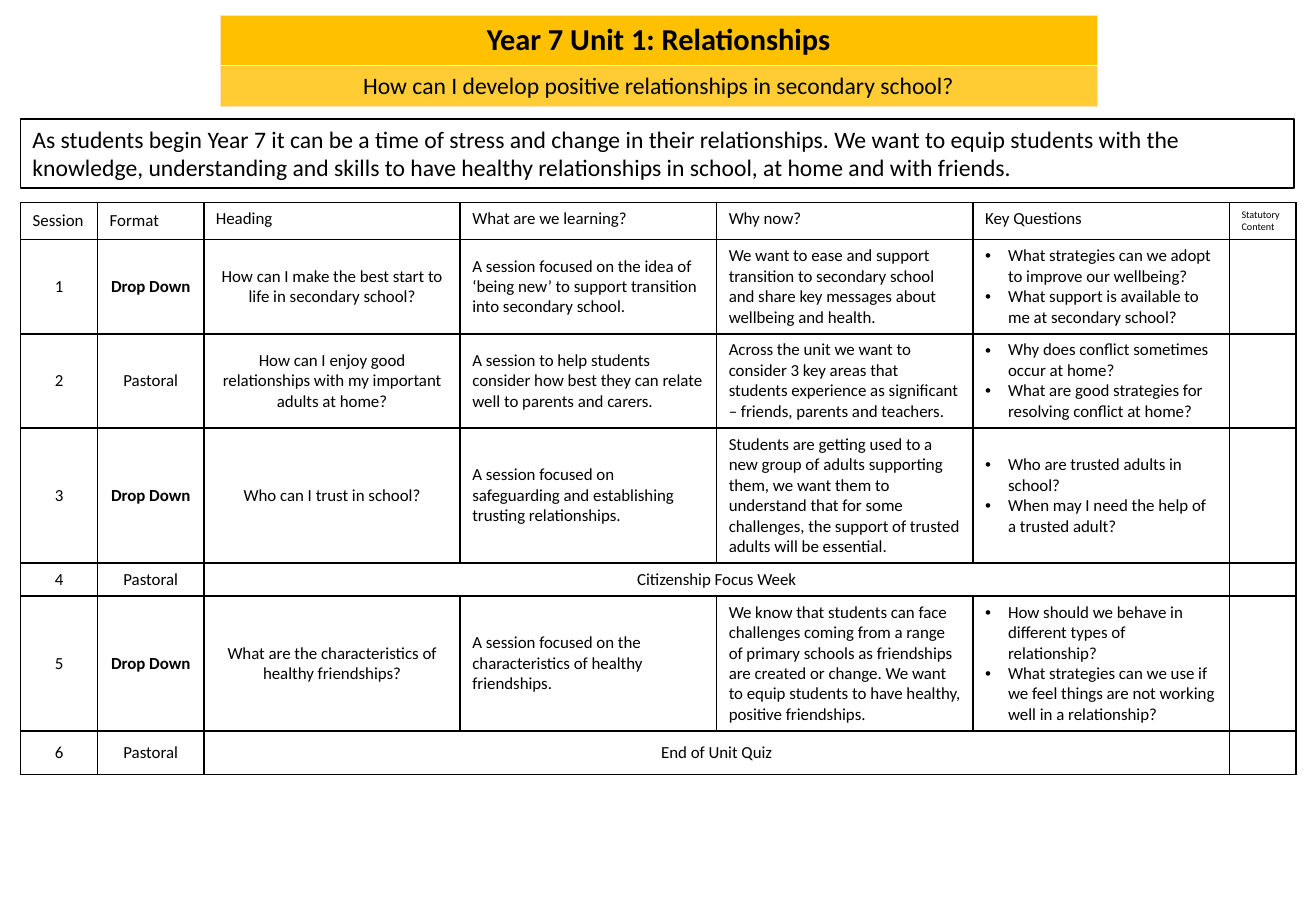
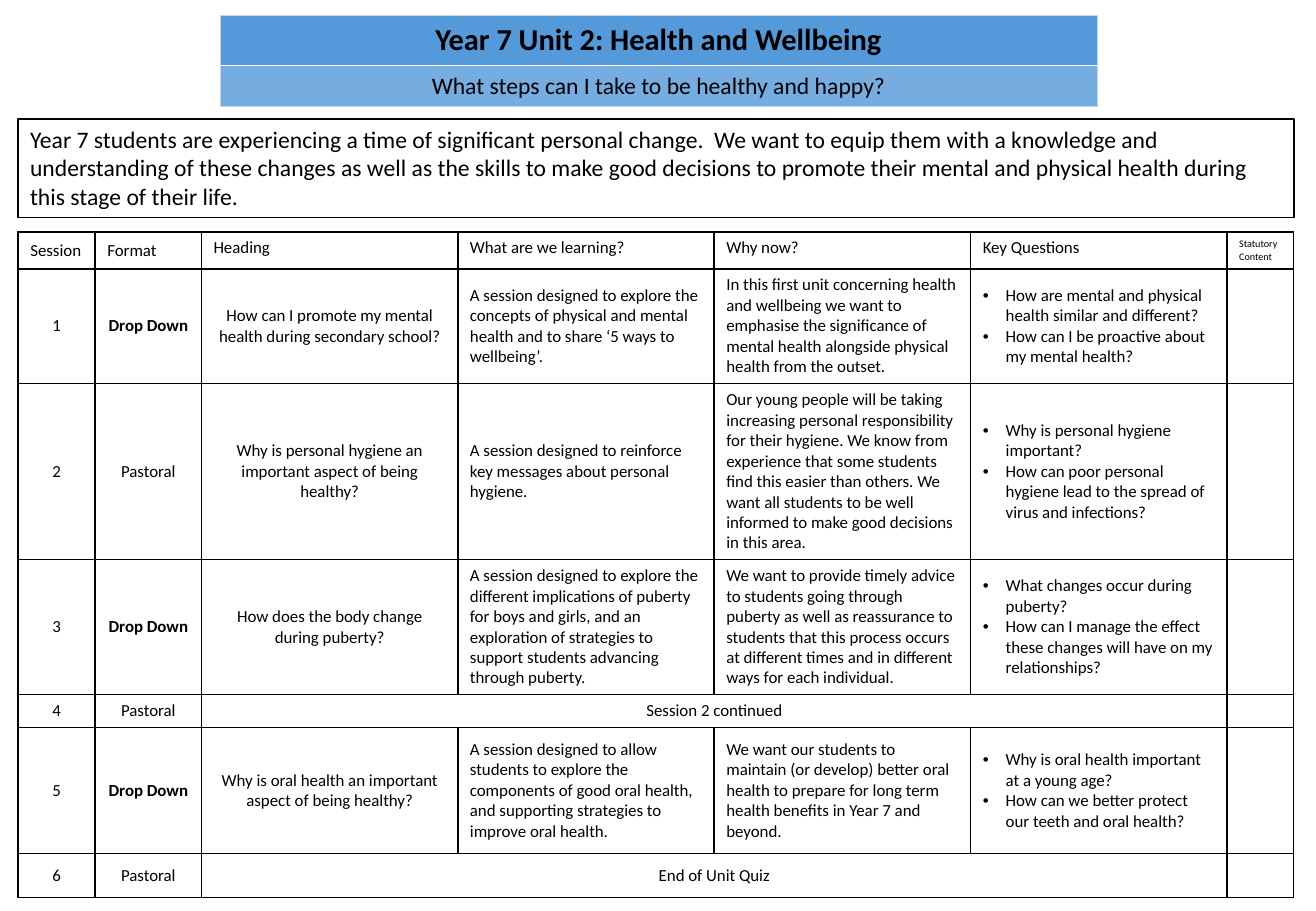
from pptx import Presentation
from pptx.dml.color import RGBColor
from pptx.enum.shapes import MSO_SHAPE
from pptx.enum.text import MSO_ANCHOR as ANCHOR, PP_ALIGN as ALIGN
from pptx.oxml import parse_xml
from pptx.oxml.ns import nsdecls, qn
from pptx.util import Cm, Pt

FONT = "Calibri"
BLACK, WHITE = "000000", "FFFFFF"

# Shared layout, in centimetres
SLIDE_WIDTH, SLIDE_HEIGHT = 27.51, 19.05
BANNER_BOX = (4.6, 0.33, 18.34)
BANNER_ROWS = (1.04, 0.84)
INTRO_TOP, INTRO_TO_TABLE = 2.49, 0.3
COLUMN_WIDTHS = (1.61, 2.22, 5.36, 5.36, 5.36, 5.36, 1.39)
BULLET_INDENT = 0.48
HEADERS = ("Session", "Format", "Heading", "What are we learning?",
           "Why now?", "Key Questions", "Statutory Content")
FIRST_WIDE, LAST_WIDE, STATUTORY = 2, 5, 6

# Lessons: heading, learning, reason, key questions; a plain string fills the row
UNITS = [
    {
        "title": "Year 7 Unit 1: Relationships",
        "question": "How can I develop positive relationships in secondary school?",
        "colours": ("FFC000", "FFCD33", "FFE2BD"),
        "intro": "As students begin Year 7 it can be a time of stress and change in their "
                 "relationships. We want to equip students with the knowledge, understanding and "
                 "skills to have healthy relationships in school, at home and with friends.",
        "intro_box": (0.43, 26.62, 1.45),
        "row_heights": (0.77, 1.97, 1.97, 2.82, 0.69, 2.82, 0.91),
        "lessons": [
            ("How can I make the best start to life in secondary school?",
             "A session focused on the idea of ‘being new’ to support transition into "
             "secondary school.",
             "We want to ease and support transition to secondary school and share key messages "
             "about wellbeing and health.",
             ["What strategies can we adopt to improve our wellbeing?",
              "What support is available to me at secondary school?"]),
            ("How can I enjoy good relationships with my important adults at home?",
             "A session to help students consider how best they can relate well to parents "
             "and carers.",
             "Across the unit we want to consider 3 key areas that students experience as "
             "significant – friends, parents and teachers.",
             ["Why does conflict sometimes occur at home?",
              "What are good strategies for resolving conflict at home?"]),
            ("Who can I trust in school?",
             "A session focused on safeguarding and establishing trusting relationships.",
             "Students are getting used to a new group of adults supporting them, we want them to "
             "understand that for some challenges, the support of trusted adults will be "
             "essential.",
             ["Who are trusted adults in school?",
              "When may I need the help of a trusted adult?"]),
            "Citizenship Focus Week",
            ("What are the characteristics of healthy friendships?",
             "A session focused on the characteristics of healthy friendships.",
             "We know that students can face challenges coming from a range of primary schools as "
             "friendships are created or change. We want to equip students to have healthy, "
             "positive friendships.",
             ["How should we behave in different types of relationship?",
              "What strategies can we use if we feel things are not working well in a "
              "relationship?"]),
            "End of Unit Quiz",
        ],
    },
    {
        "title": "Year 7 Unit 2: Health and Wellbeing",
        "question": "What steps can I take to be healthy and happy?",
        "colours": ("5499DA", "76ADE1", "C4D5EB"),
        "intro": "Year 7 students are experiencing a time of significant personal change.  We want "
                 "to equip them with a knowledge and understanding of these changes as well as the "
                 "skills to make good decisions to promote their mental and physical health during "
                 "this stage of their life.",
        "intro_box": (0.38, 26.67, 2.06),
        "row_heights": (0.77, 2.4, 3.68, 2.82, 0.69, 2.64, 0.92),
        "lessons": [
            ("How can I promote my mental health during secondary school?",
             "A session designed to explore the concepts of physical and mental health and to "
             "share ‘5 ways to wellbeing’.",
             "In this first unit concerning health and wellbeing we want to emphasise the "
             "significance of mental health alongside physical health from the outset.",
             ["How are mental and physical health similar and different?",
              "How can I be proactive about my mental health?"]),
            ("Why is personal hygiene an important aspect of being healthy?",
             "A session designed to reinforce key messages about personal hygiene.",
             "Our young people will be taking increasing personal responsibility for their "
             "hygiene. We know from experience that some students find this easier than others. "
             "We want all students to be well informed to make good decisions in this area.",
             ["Why is personal hygiene important?",
              "How can poor personal hygiene lead to the spread of virus and infections?"]),
            ("How does the body change during puberty?",
             "A session designed to explore the different implications of puberty for boys and "
             "girls, and an exploration of strategies to support students advancing through "
             "puberty.",
             "We want to provide timely advice to students going through puberty as well as "
             "reassurance to students that this process occurs at different times and in "
             "different ways for each individual.",
             ["What changes occur during puberty?",
              "How can I manage the effect these changes will have on my relationships?"]),
            "Session 2 continued",
            ("Why is oral health an important aspect of being healthy?",
             "A session designed to allow students to explore the components of good oral health, "
             "and supporting strategies to improve oral health.",
             "We want our students to maintain (or develop) better oral health to prepare for long "
             "term health benefits in Year 7 and beyond.",
             ["Why is oral health important at a young age?",
              "How can we better protect our teeth and oral health?"]),
            "End of Unit Quiz",
        ],
    },
]


def colour(hex_text):
    return RGBColor.from_string(hex_text)


def write(paragraph, text, size, bold=False, align=ALIGN.LEFT):
    paragraph.alignment = align
    run = paragraph.add_run()
    run.text = text
    run.font.name = FONT
    run.font.size = Pt(size)
    run.font.bold = bold
    run.font.color.rgb = colour(BLACK)


def write_cell(cell, text, size=10, bold=False, align=ALIGN.LEFT, anchor=ANCHOR.MIDDLE):
    cell.vertical_anchor = anchor
    write(cell.text_frame.paragraphs[0], text, size, bold, align)


def write_bullets(cell, items):
    cell.vertical_anchor = ANCHOR.MIDDLE
    frame = cell.text_frame
    for index, item in enumerate(items):
        paragraph = frame.add_paragraph() if index else frame.paragraphs[0]
        write(paragraph, item, 10)
        properties = paragraph._p.get_or_add_pPr()
        properties.set("marL", str(Cm(BULLET_INDENT)))
        properties.set("indent", str(-Cm(BULLET_INDENT)))
        properties.append(parse_xml(f'<a:buFont {nsdecls("a")} typeface="Arial"/>'))
        properties.append(parse_xml(f'<a:buChar {nsdecls("a")} char="•"/>'))


def set_borders(cell, hex_text, width, sides="LRTB"):
    properties = cell._tc.get_or_add_tcPr()
    for index, side in enumerate(sides):
        properties.insert(index, parse_xml(
            f'<a:ln{side} {nsdecls("a")} w="{Pt(width)}"><a:solidFill>'
            f'<a:srgbClr val="{hex_text}"/></a:solidFill></a:ln{side}>'))


def shrink_empty_cell(cell, size):
    """Keep an empty cell from stretching its row."""
    paragraph = cell.text_frame.paragraphs[0]._p
    if paragraph.find(qn("a:r")) is None:
        paragraph.append(parse_xml(f'<a:endParaRPr {nsdecls("a")} sz="{size * 100}"/>'))


def add_plain_table(slide, left, top, column_widths, row_heights):
    table = slide.shapes.add_table(
        len(row_heights), len(column_widths), Cm(left), Cm(top),
        Cm(sum(column_widths)), Cm(sum(row_heights))).table
    table.first_row = table.horz_banding = False
    for column, width in zip(table.columns, column_widths):
        column.width = Cm(width)
    for row, height in zip(table.rows, row_heights):
        row.height = Cm(height)
    return table


def add_banner(slide, box, unit):
    left, top, width = box
    title_fill, question_fill, edge = unit["colours"]
    table = add_plain_table(slide, left, top, [width], BANNER_ROWS)
    bands = [(unit["title"], 18, True, title_fill, "LRT"),
             (unit["question"], 14, False, question_fill, "LRB")]
    for row, (text, size, bold, fill, sides) in enumerate(bands):
        cell = table.cell(row, 0)
        write_cell(cell, text, size, bold, ALIGN.CENTER, ANCHOR.TOP)
        cell.fill.solid()
        cell.fill.fore_color.rgb = colour(fill)
        set_borders(cell, edge, 0.5, sides)


def add_intro(slide, box, text):
    shape = slide.shapes.add_shape(MSO_SHAPE.RECTANGLE, *(Cm(length) for length in box))
    shape.shadow.inherit = False
    shape.fill.solid()
    shape.fill.fore_color.rgb = colour(WHITE)
    shape.line.color.rgb = colour(BLACK)
    shape.line.width = Pt(1)
    frame = shape.text_frame
    frame.word_wrap = True
    frame.vertical_anchor = ANCHOR.TOP
    write(frame.paragraphs[0], text, 14)


def add_sessions(slide, left, top, unit):
    table = add_plain_table(slide, left, top, COLUMN_WIDTHS, unit["row_heights"])

    # Header row
    for column, header in enumerate(HEADERS):
        write_cell(table.cell(0, column), header, 6 if column == STATUTORY else 10,
                   anchor=ANCHOR.MIDDLE if column < FIRST_WIDE else ANCHOR.TOP)

    # Odd sessions are drop downs, even ones pastoral
    for number, lesson in enumerate(unit["lessons"], 1):
        drop_down = number % 2 == 1
        session, kind, heading, learning, reason, questions, _ = (
            table.cell(number, column) for column in range(len(HEADERS)))
        write_cell(session, str(number), align=ALIGN.CENTER)
        write_cell(kind, "Drop Down" if drop_down else "Pastoral",
                   bold=drop_down, align=ALIGN.CENTER)
        if isinstance(lesson, str):
            heading.merge(table.cell(number, LAST_WIDE))
            write_cell(heading, lesson, align=ALIGN.CENTER)
        else:
            write_cell(heading, lesson[0], align=ALIGN.CENTER)
            write_cell(learning, lesson[1])
            write_cell(reason, lesson[2])
            write_bullets(questions, lesson[3])

    for cell in table.iter_cells():
        cell.fill.background()
        set_borders(cell, BLACK, 1)
        shrink_empty_cell(cell, 10)


def add_unit_slide(presentation, unit):
    slide = presentation.slides.add_slide(presentation.slide_layouts[6])
    left, width, height = unit["intro_box"]
    add_banner(slide, BANNER_BOX, unit)
    add_sessions(slide, left, INTRO_TOP + height + INTRO_TO_TABLE, unit)
    add_intro(slide, (left, INTRO_TOP, width, height), unit["intro"])


def main():
    presentation = Presentation()
    presentation.slide_width = Cm(SLIDE_WIDTH)
    presentation.slide_height = Cm(SLIDE_HEIGHT)
    for unit in UNITS:
        add_unit_slide(presentation, unit)
    presentation.save("out.pptx")


if __name__ == "__main__":
    main()
